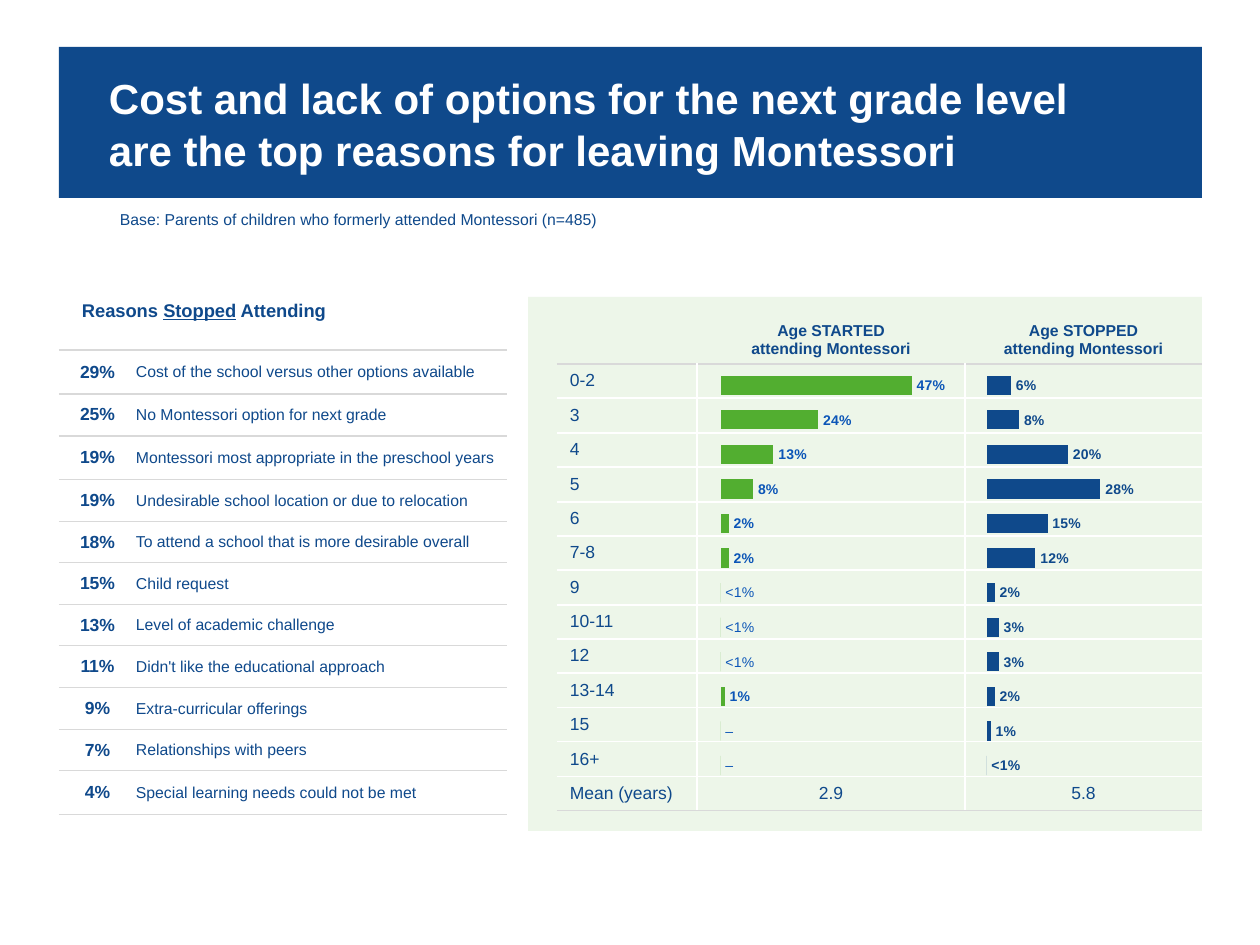
import copy

import pptx
import pptx.chart.data
import pptx.dml.color
import pptx.enum.chart
import pptx.enum.shapes
import pptx.enum.text
import pptx.oxml
import pptx.oxml.ns
import pptx.util
from lxml import etree

NAVY, GREEN, BLUE, GREY, WHITE = "0F498B", "52AE30", "0B55B7", "D9D9D9", "FFFFFF"
FONT = "Arial"
LEFT, CENTER = pptx.enum.text.PP_ALIGN.LEFT, pptx.enum.text.PP_ALIGN.CENTER
MIDDLE, BOTTOM = pptx.enum.text.MSO_ANCHOR.MIDDLE, pptx.enum.text.MSO_ANCHOR.BOTTOM
qn = pptx.oxml.ns.qn

REASONS = [
    ("29%", "Cost of the school versus other options available"),
    ("25%", "No Montessori option for next grade"),
    ("19%", "Montessori most appropriate in the preschool years"),
    ("19%", "Undesirable school location or due to relocation"),
    ("18%", "To attend a school that is more desirable overall"),
    ("15%", "Child request"),
    ("13%", "Level of academic challenge"),
    ("11%", "Didn't like the educational approach"),
    ("9%", "Extra-curricular offerings"),
    ("7%", "Relationships with peers"),
    ("4%", "Special learning needs could not be met"),
]
REASON_HEIGHTS = [44, 42, 44, 42, 41, 42, 41, 42, 42, 41, 44]
AGES = ["0-2", "3", "4", "5", "6", "7-8", "9", "10-11", "12", "13-14", "15", "16+"]
STARTED = [0.47, 0.24, 0.13, 0.08, 0.02, 0.02, 0, 0, 0, 0.01, 0, 0]
STOPPED = [0.06, 0.08, 0.2, 0.28, 0.15, 0.12, 0.02, 0.03, 0.03, 0.02, 0.01, 0]


def px(n):
    return pptx.util.Emu(round(n * 914400 / 126))


def rgb(color):
    return pptx.dml.color.RGBColor.from_string(color)


def style(font, size, color, bold=False):
    font.name, font.size, font.bold = FONT, pptx.util.Pt(size), bold
    font.color.rgb = rgb(color)


def add_text(p, text, size=9, color=NAVY, bold=False, underline=None, align=None):
    """Append text to a paragraph; a newline becomes a line break."""
    if align is not None:
        p.alignment = align
    for i, line in enumerate(text.split("\n")):
        if i:
            p.add_line_break()
            p._p[-1].append(copy.deepcopy(r._r.rPr))
        r = p.add_run()
        r.text = line
        style(r.font, size, color, bold)
        r.font.underline = underline


def set_margins(box, left=0, top=0, right=0, bottom=0):
    box.margin_left, box.margin_top = px(left), px(top)
    box.margin_right, box.margin_bottom = px(right), px(bottom)


def place(shape, x, y, w, h):
    shape.left, shape.top, shape.width, shape.height = px(x), px(y), px(w), px(h)


def add_title(s, text, x, y, w, h):
    sp = s.shapes.title
    place(sp, x, y, w, h)
    sp._element.spPr.append(pptx.oxml.parse_xml(
        '<a:prstGeom xmlns:a="http://schemas.openxmlformats.org/drawingml/2006/main" prst="roundRect">'
        '<a:avLst><a:gd name="adj" fmla="val 8000"/></a:avLst></a:prstGeom>'))
    sp.fill.solid()
    sp.fill.fore_color.rgb = rgb(NAVY)
    tf = sp.text_frame
    tf.auto_size = pptx.enum.text.MSO_AUTO_SIZE.NONE
    tf.word_wrap, tf.vertical_anchor = True, MIDDLE
    set_margins(tf, 50, 6, 50, 6)
    p = tf.paragraphs[0]
    p.line_spacing = 1.05
    add_text(p, text, size=24, color=WHITE, bold=True, align=LEFT)


def add_panel(s, x, y, w, h, color, opacity):
    sp = s.shapes.add_shape(pptx.enum.shapes.MSO_SHAPE.RECTANGLE, px(x), px(y), px(w), px(h))
    sp.shadow.inherit = False
    sp.line.fill.background()
    sp.fill.solid()
    sp.fill.fore_color.rgb = rgb(color)
    clr = sp._element.spPr.find(qn("a:solidFill"))[0]
    etree.SubElement(clr, qn("a:alpha"), val=str(opacity * 1000))


def add_label(s, x, y, w, h):
    tf = s.shapes.add_textbox(px(x), px(y), px(w), px(h)).text_frame
    tf.word_wrap = True
    set_margins(tf)
    return tf.paragraphs[0]


def add_grid(s, x, y, widths, heights):
    frame = s.shapes.add_table(len(heights), len(widths), px(x), px(y),
                               px(sum(widths)), px(sum(heights)))
    table = frame.table
    table.first_row = table.horz_banding = False
    for column, w in zip(table.columns, widths):
        column.width = px(w)
    for row, h in zip(table.rows, heights):
        row.height = px(h)
    return table


def fill_cell(cell, text, borders, margins=(0, 0, 0, 0), anchor=MIDDLE, **fmt):
    """Write one cell; borders maps a side (L, R, T, B) to a colour."""
    cell.fill.background()
    set_margins(cell, *margins)
    cell.vertical_anchor = anchor
    p = cell.text_frame.paragraphs[0]
    if text:
        add_text(p, text, **fmt)
    else:
        etree.SubElement(p._p, qn("a:endParaRPr"), sz="1000")
    tcPr = cell._tc.get_or_add_tcPr()
    for i, side in enumerate("LRTB"):
        color = borders.get(side)
        ln = etree.Element(qn("a:ln" + side), w="9525" if color == GREY else "12700")
        fill = etree.SubElement(ln, qn("a:solidFill" if color else "a:noFill"))
        if color:
            etree.SubElement(fill, qn("a:srgbClr"), val=color)
        tcPr.insert(i, ln)


def add_reasons(s):
    table = add_grid(s, 59, 350, [77, 371], REASON_HEIGHTS)
    lines = {"T": GREY, "B": GREY}
    for i, (share, reason) in enumerate(REASONS):
        fill_cell(table.cell(i, 0), share, lines, size=10, bold=True, align=CENTER)
        fill_cell(table.cell(i, 1), reason, lines)


def add_ages(s):
    edges = [364 + round(447 * i / 13) for i in range(14)]
    heights = [53] + [b - a for a, b in zip(edges, edges[1:])]
    table = add_grid(s, 557, 311, [140, 268, 237], heights)
    heads = ["", "Age STARTED\nattending Montessori", "Age STOPPED\nattending Montessori"]
    for c, head in enumerate(heads):
        fill_cell(table.cell(0, c), head, {"B": GREY}, (6, 6, 6, 6), BOTTOM,
                  bold=True, align=CENTER)
    rows = [(age, "", "") for age in AGES] + [("Mean (years)", "2.9", "5.8")]
    for i, row in enumerate(rows, 1):
        for c, text in enumerate(row):
            lines = {"T": GREY if i == 1 else WHITE, "B": GREY if i == len(rows) else WHITE}
            if c > 0:
                lines["L"] = WHITE
            if c < 2:
                lines["R"] = WHITE
            fill_cell(table.cell(i, c), text, lines, (1 if c else 13, 6, 1, 6),
                      size=10, align=CENTER if c else LEFT)


def add_bars(s, x, values, color, label_color, notes, notes_bold):
    data = pptx.chart.data.CategoryChartData(number_format="0%")
    data.categories = [str(i) for i in range(1, len(values) + 1)]
    data.add_series("Series 1", values)
    chart = s.shapes.add_chart(pptx.enum.chart.XL_CHART_TYPE.BAR_CLUSTERED,
                               px(x), px(348), px(256), px(455), data).chart
    chart.has_title = chart.has_legend = False
    style(chart.font, 9, "052754")
    # Hidden axes, first category on top
    cat, val = chart.category_axis, chart.value_axis
    cat.visible = val.visible = False
    cat.reverse_order = True
    val.has_major_gridlines = False
    val.minimum_scale, val.maximum_scale = 0, 0.5
    # Bars and their labels
    plot = chart.plots[0]
    plot.gap_width, plot.vary_by_categories = 80, False
    series = plot.series[0]
    series.format.fill.solid()
    series.format.fill.fore_color.rgb = rgb(color)
    outside = pptx.enum.chart.XL_LABEL_POSITION.OUTSIDE_END
    labels = series.data_labels
    labels.show_value, labels.position = True, outside
    labels.number_format, labels.number_format_is_linked = "0%", False
    style(labels.font, 8, label_color, True)
    for i, text in notes.items():
        label = series.points[i].data_label
        add_text(label.text_frame.paragraphs[0], text, size=8, color=label_color, bold=notes_bold)
        label.position = outside
    # Fixed inner plot area
    area = chart._chartSpace.chart.plotArea
    for old in area.findall(qn("c:layout")):
        area.remove(old)
    layout = etree.Element(qn("c:layout"))
    manual = etree.SubElement(layout, qn("c:manualLayout"))
    for tag, value in [("layoutTarget", "inner"), ("xMode", "edge"), ("yMode", "edge"),
                       ("x", "0.088"), ("y", "0.044"), ("w", "0.795"), ("h", "0.912")]:
        etree.SubElement(manual, qn("c:" + tag), val=value)
    area.insert(0, layout)


def main():
    prs = pptx.Presentation()
    prs.slide_width, prs.slide_height = px(1260), px(945)
    s = prs.slides.add_slide(prs.slide_layouts[5])

    # Heading
    add_title(s, "Cost and lack of options for the next grade level\n"
                 "are the top reasons for leaving Montessori", 59, 47, 1143, 151)
    add_text(add_label(s, 120, 210, 578, 19),
             "Base: Parents of children who formerly attended Montessori (n=485)")

    # Ages, on the right
    add_panel(s, 528, 297, 674, 534, GREEN, 10)
    add_ages(s)
    add_bars(s, 964, STOPPED, NAVY, NAVY, {11: "<1%"}, True)
    add_bars(s, 698, STARTED, GREEN, BLUE,
             {6: "<1%", 7: "<1%", 8: "<1%", 10: "–", 11: "–"}, False)

    # Reasons, on the left
    p = add_label(s, 82, 299, 286, 23)
    for text, underline in [("Reasons ", None), ("Stopped", True), (" Attending", None)]:
        add_text(p, text, size=10.5, bold=True, underline=underline)
    add_reasons(s)

    prs.save("out.pptx")


if __name__ == "__main__":
    main()
